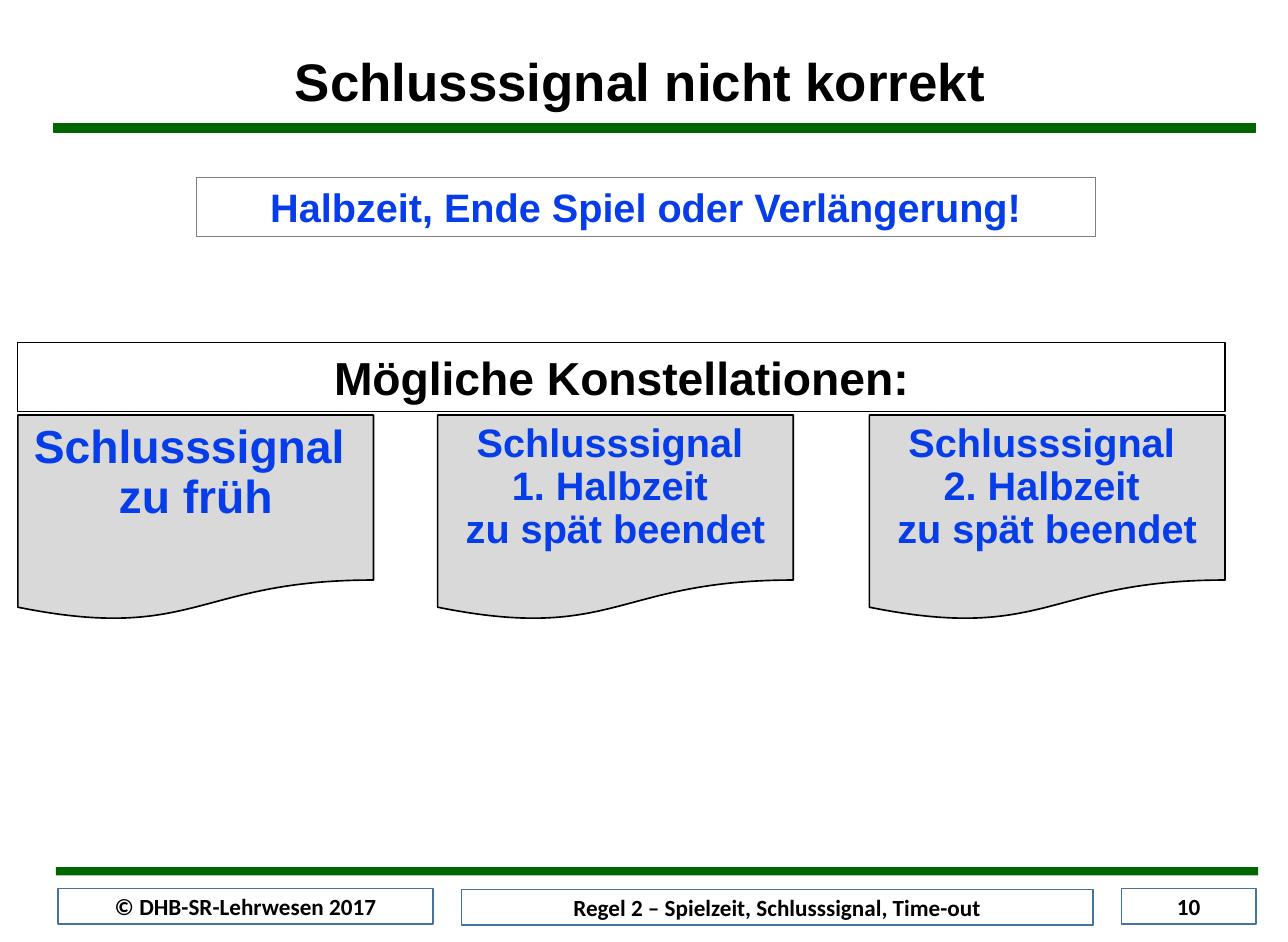
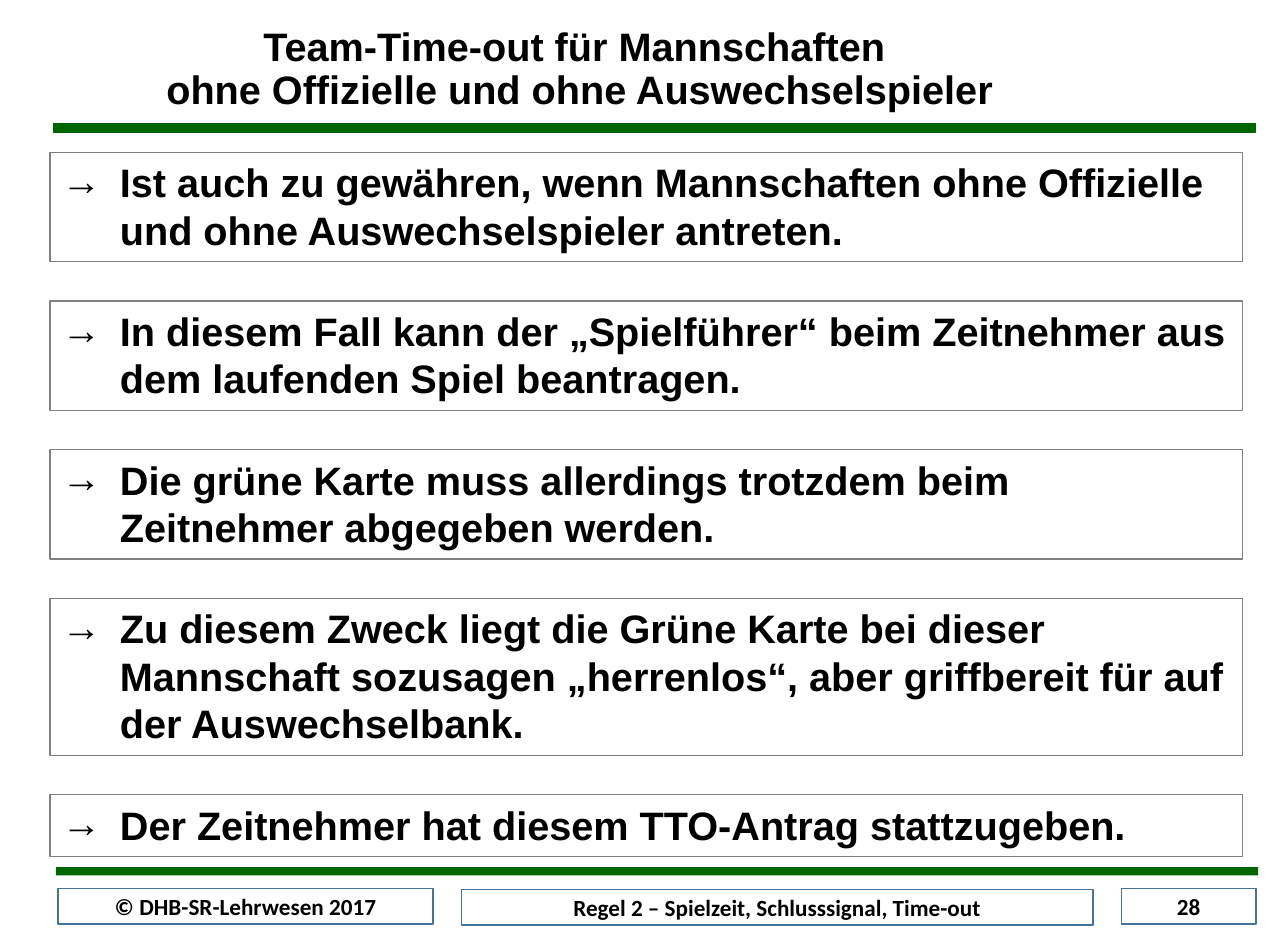
import lxml.etree
import pptx
import pptx.dml.color
import pptx.enum.shapes
import pptx.enum.text
import pptx.oxml.ns
import pptx.util

Inches = pptx.util.Inches
Pt = pptx.util.Pt
SHAPE = pptx.enum.shapes.MSO_SHAPE
ALIGN = pptx.enum.text.PP_ALIGN
ANCHOR = pptx.enum.text.MSO_ANCHOR

COLORS = {
    "green": "006600",
    "blue": "063DE8",
    "frame": "43739E",
    "gray": "808080",
    "light": "D9D9D9",
    "white": "FFFFFF",
    "black": "000000",
}
FRAME_FORMAT = {
    "margin_left": Inches(0.1),
    "margin_right": Inches(0.1),
    "margin_top": Inches(0.05),
    "margin_bottom": Inches(0.05),
    "word_wrap": True,
    "auto_size": pptx.enum.text.MSO_AUTO_SIZE.NONE,
}
BULLET_INDENT = 0.49


def rgb(name):
    return pptx.dml.color.RGBColor.from_string(COLORS[name])


def set_attributes(target, values):
    for name, value in values.items():
        setattr(target, name, value)


def write_text(shape, lines, size, color="black", font="Arial",
               align=ALIGN.CENTER, anchor=ANCHOR.MIDDLE, spacing=None, bullet=None):
    frame = shape.text_frame
    set_attributes(frame, {**FRAME_FORMAT, "vertical_anchor": anchor})
    for index, line in enumerate(lines):
        para = frame.paragraphs[0] if index == 0 else frame.add_paragraph()
        if bullet:
            add_bullet(para, bullet)
        set_attributes(para, {"alignment": align, "line_spacing": spacing})
        span = para.add_run()
        span.text = line
        set_attributes(span.font, {"name": font, "size": Pt(size), "bold": True})
        span.font.color.rgb = rgb(color)


def add_bullet(para, character):
    properties = para._p.get_or_add_pPr()
    properties.set("marL", str(Inches(BULLET_INDENT)))
    properties.set("indent", str(-Inches(BULLET_INDENT)))
    for tag, key, value in (("a:buFont", "typeface", "Arial"), ("a:buChar", "char", character)):
        element = lxml.etree.SubElement(properties, pptx.oxml.ns.qn(tag))
        element.set(key, value)


def add_box(slide, place, fill=None, line=None, width=0.75, kind=SHAPE.RECTANGLE):
    box = slide.shapes.add_shape(kind, *map(Inches, place))
    box.shadow.inherit = False
    if fill:
        box.fill.solid()
        box.fill.fore_color.rgb = rgb(fill)
    else:
        box.fill.background()
    if line:
        box.line.color.rgb = rgb(line)
        box.line.width = Pt(width)
    else:
        box.line.fill.background()
    return box


def add_page(deck, title, title_place, title_size, number):
    """Slide with title, green bands and footer boxes."""
    slide = deck.slides.add_slide(deck.slide_layouts.get_by_name("Title Only"))
    heading = slide.shapes.title
    places = map(Inches, title_place)
    set_attributes(heading, dict(zip(("left", "top", "width", "height"), places)))
    write_text(heading, title, title_size, anchor=ANCHOR.TOP, spacing=0.9)

    # Bands
    add_box(slide, (0.45, 1.04, 10.11, 0.07), "green", "green")
    add_box(slide, (0.47, 7.29, 10.11, 0.07), "green")

    # Footer
    for left, top, width, text in (
        (0.49, 7.47, 3.15, "© DHB-SR-Lehrwesen 2017"),
        (3.88, 7.48, 5.31, "Regel 2 – Spielzeit, Schlusssignal, Time-out"),
        (9.43, 7.47, 1.13, str(number)),
    ):
        footer = add_box(slide, (left, top, width, 0.3), "white", "frame", 1)
        write_text(footer, [text], 14, font="Calibri")
    return slide


def add_document(slide, left, lines, size):
    document = add_box(slide, (left, 3.49, 2.99, 1.73), "light", "black", 1,
                       SHAPE.FLOWCHART_DOCUMENT)
    write_text(document, lines, size, "blue", anchor=ANCHOR.TOP, spacing=0.9)
    document.text_frame.margin_top = Inches(0.07)


def add_signal_slide(deck):
    slide = add_page(deck, ["Schlusssignal nicht korrekt"], (2.34, 0.42, 6.09, 0.49), 32, 10)
    occasion = add_box(slide, (1.65, 1.49, 7.56, 0.5), line="gray")
    write_text(occasion, ["Halbzeit, Ende Spiel oder Verlängerung!"], 24, "blue")
    header = add_box(slide, (0.15, 2.88, 10.15, 0.58), line="black")
    write_text(header, ["Mögliche Konstellationen:"], 28)

    # Possible cases
    for left, size, lines in (
        (0.15, 28, ["Schlusssignal ", "zu früh"]),
        (3.68, 24, ["Schlusssignal ", "1. Halbzeit ", "zu spät beendet"]),
        (7.31, 24, ["Schlusssignal ", "2. Halbzeit ", "zu spät beendet"]),
    ):
        add_document(slide, left, lines, size)


def add_timeout_slide(deck):
    title = ["Team-Time-out für Mannschaften ", "ohne Offizielle und ohne Auswechselspieler"]
    slide = add_page(deck, title, (1.11, 0.18, 7.53, 0.79), 24, 28)

    # Stack of rules: box height follows the number of text lines
    top, gap = 1.28, 0.33
    for line_count, text in (
        (2, "Ist auch zu gewähren, wenn Mannschaften ohne Offizielle und ohne "
            "Auswechselspieler antreten."),
        (2, "In diesem Fall kann der „Spielführer“ beim Zeitnehmer aus dem "
            "laufenden Spiel beantragen."),
        (2, "Die grüne Karte muss allerdings trotzdem beim Zeitnehmer abgegeben werden."),
        (3, "Zu diesem Zweck liegt die Grüne Karte bei dieser Mannschaft sozusagen "
            "„herrenlos“, aber griffbereit für auf der Auswechselbank."),
        (1, "Der Zeitnehmer hat diesem TTO-Antrag stattzugeben."),
    ):
        height = 0.12 + 0.4 * line_count
        rule = add_box(slide, (0.42, top, 10.03, height), line="gray")
        write_text(rule, [text], 24, align=ALIGN.LEFT, anchor=ANCHOR.TOP, bullet="→")
        top += height + gap


def main():
    deck = pptx.Presentation()
    set_attributes(deck, {"slide_width": Inches(10.83), "slide_height": Inches(7.92)})
    add_signal_slide(deck)
    add_timeout_slide(deck)
    deck.save("out.pptx")


if __name__ == "__main__":
    main()
